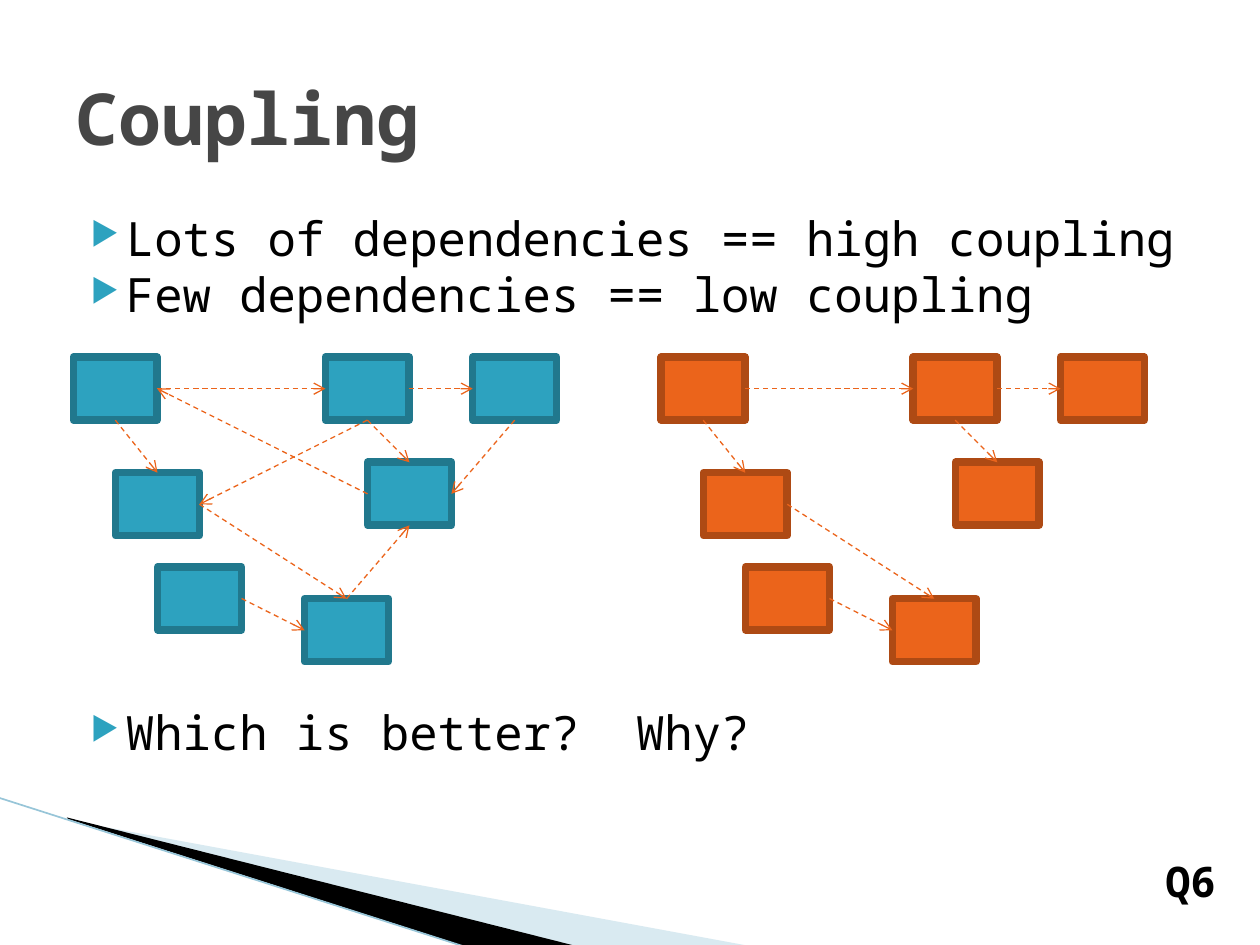
from lxml.etree import SubElement
from pptx import Presentation
from pptx.dml.color import RGBColor
from pptx.enum.dml import MSO_LINE
from pptx.enum.shapes import MSO_CONNECTOR, MSO_SHAPE
from pptx.enum.text import MSO_ANCHOR, PP_ALIGN
from pptx.oxml.ns import qn
from pptx.util import Cm, Pt

FONT = "Noto Sans Mono"
TEAL, ORANGE = "2DA2BF", "EB641B"
TOP, LEFT, BOTTOM, RIGHT = range(4)

BOX_WIDTH, BOX_HEIGHT = 1.69, 1.27
BOXES = {
    "A": (1.48, 7.2),
    "B": (2.33, 9.53),
    "C": (6.14, 12.07),
    "D": (3.18, 11.43),
    "E": (6.56, 7.2),
    "F": (7.41, 9.32),
    "G": (9.53, 7.2),
}
# Each dependency: source box, its side, target box, its side
LOW_COUPLING = [
    ("A", RIGHT, "E", LEFT),
    ("A", BOTTOM, "B", TOP),
    ("D", RIGHT, "C", LEFT),
    ("B", RIGHT, "C", TOP),
    ("E", RIGHT, "G", LEFT),
    ("E", BOTTOM, "F", TOP),
]
HIGH_COUPLING = LOW_COUPLING + [
    ("E", BOTTOM, "B", RIGHT),
    ("C", TOP, "F", BOTTOM),
    ("G", BOTTOM, "F", RIGHT),
    ("F", LEFT, "A", RIGHT),
]


def color(value):
    return RGBColor.from_string(value)


def apply_format(target, values):
    for name, value in values.items():
        setattr(target, name, value)


def add_child(parent, tag, **attributes):
    return SubElement(parent, qn(tag), attributes)


def add_wedge(slide, points, fill, alpha=None):
    corners = [(Cm(x), Cm(y)) for x, y in points]
    builder = slide.shapes.build_freeform(*corners[0])
    builder.add_line_segments(corners[1:], close=True)
    shape = builder.convert_to_shape()
    shape.shadow.inherit = False
    shape.fill.solid()
    shape.fill.fore_color.rgb = color(fill)
    shape.line.fill.background()
    if alpha is not None:
        fill_color = shape.fill._xPr.find(qn("a:solidFill"))[0]
        add_child(fill_color, "a:alpha", val=str(alpha * 1000))


def add_line(shapes, begin, end, line_color, width):
    connector = shapes.add_connector(MSO_CONNECTOR.STRAIGHT, *begin, *end)
    connector.line.color.rgb = color(line_color)
    connector.line.width = Pt(width)
    add_child(connector._element.spPr, "a:effectLst")
    return connector


def add_text_box(slide, left, top, width, height, **frame_format):
    box = slide.shapes.add_textbox(Cm(left), Cm(top), Cm(width), Cm(height))
    apply_format(box.text_frame, {"word_wrap": True, **frame_format})
    return box.text_frame


def write(paragraph, text, size, text_color, bold=False):
    run = paragraph.add_run()
    run.text = text
    apply_format(run.font, {"name": FONT, "size": Pt(size), "bold": bold})
    run.font.color.rgb = color(text_color)


def add_bullets(text_frame, items):
    for index, (text, space) in enumerate(items):
        paragraph = text_frame.add_paragraph() if index else text_frame.paragraphs[0]
        apply_format(paragraph, {"line_spacing": 0.9, "space_before": Pt(space)})
        properties = paragraph._p.get_or_add_pPr()
        properties.set("marL", str(Cm(1.02)))
        properties.set("indent", str(Cm(-0.71)))
        add_child(add_child(properties, "a:buClr"), "a:srgbClr", val=TEAL)
        add_child(properties, "a:buSzPct", val="68000")
        add_child(properties, "a:buChar", char="▶")
        write(paragraph, text, 27, "000000")


def add_box(group, left, top, fill, outline):
    shape = group.shapes.add_shape(
        MSO_SHAPE.RECTANGLE, Cm(left), Cm(top), Cm(BOX_WIDTH), Cm(BOX_HEIGHT))
    shape.shadow.inherit = False
    shape.fill.solid()
    shape.fill.fore_color.rgb = color(fill)
    shape.line.color.rgb = color(outline)
    shape.line.width = Pt(4.33)
    return shape


def add_dependency(group, source, source_side, target, target_side):
    connector = add_line(group.shapes, (source.left, source.top),
                         (target.left, target.top), ORANGE, 0.75)
    connector.begin_connect(source, source_side)
    connector.end_connect(target, target_side)
    connector.line.dash_style = MSO_LINE.DASH
    add_child(connector.line._ln, "a:tailEnd", type="arrow")


def add_diagram(slide, offset, fill, outline, dependencies):
    group = slide.shapes.add_group_shape()
    boxes = {name: add_box(group, left + offset, top, fill, outline)
             for name, (left, top) in BOXES.items()}
    for source, source_side, target, target_side in dependencies:
        add_dependency(group, boxes[source], source_side, boxes[target], target_side)


def main():
    presentation = Presentation()
    presentation.slide_width, presentation.slide_height = Cm(25.4), Cm(19.05)
    slide = presentation.slides.add_slide(presentation.slide_layouts[6])

    # Corner decoration
    add_wedge(slide, [(1.4, 16.54), (15.11, 19.07), (11.58, 19.07), (1.4, 16.51)],
              "A0CBDC", alpha=40)
    add_wedge(slide, [(1.35, 16.48), (11.61, 19.07), (9.45, 19.1), (1.37, 16.51)],
              "000000")
    add_line(slide.shapes, (Cm(-0.03), Cm(16.08)), (Cm(9.42), Cm(19.1)), "97C5D8", 0.95)

    # Bullets, with room for the diagrams before the question
    body = add_text_box(slide, 1.27, 4.11, 22.86, 12.57, margin_top=Cm(0.23))
    add_bullets(body, [
        ("Lots of dependencies == high coupling", 0),
        ("Few dependencies == low coupling", 3.2),
        ("Which is better?  Why?", 221),
    ])

    # Title and question number
    title = add_text_box(slide, 1.27, 0.76, 22.86, 3.18,
                         vertical_anchor=MSO_ANCHOR.MIDDLE)
    write(title.paragraphs[0], "Coupling", 41, "464646", bold=True)
    number = add_text_box(slide, 20.52, 17.12, 4.24, 1.3)
    number.paragraphs[0].alignment = PP_ALIGN.RIGHT
    write(number.paragraphs[0], "Q6", 24, "000000", bold=True)

    # Dependency diagrams
    add_diagram(slide, 0, TEAL, "21788D", HIGH_COUPLING)
    add_diagram(slide, 11.85, ORANGE, "AE4A14", LOW_COUPLING)

    presentation.save("out.pptx")


if __name__ == "__main__":
    main()
